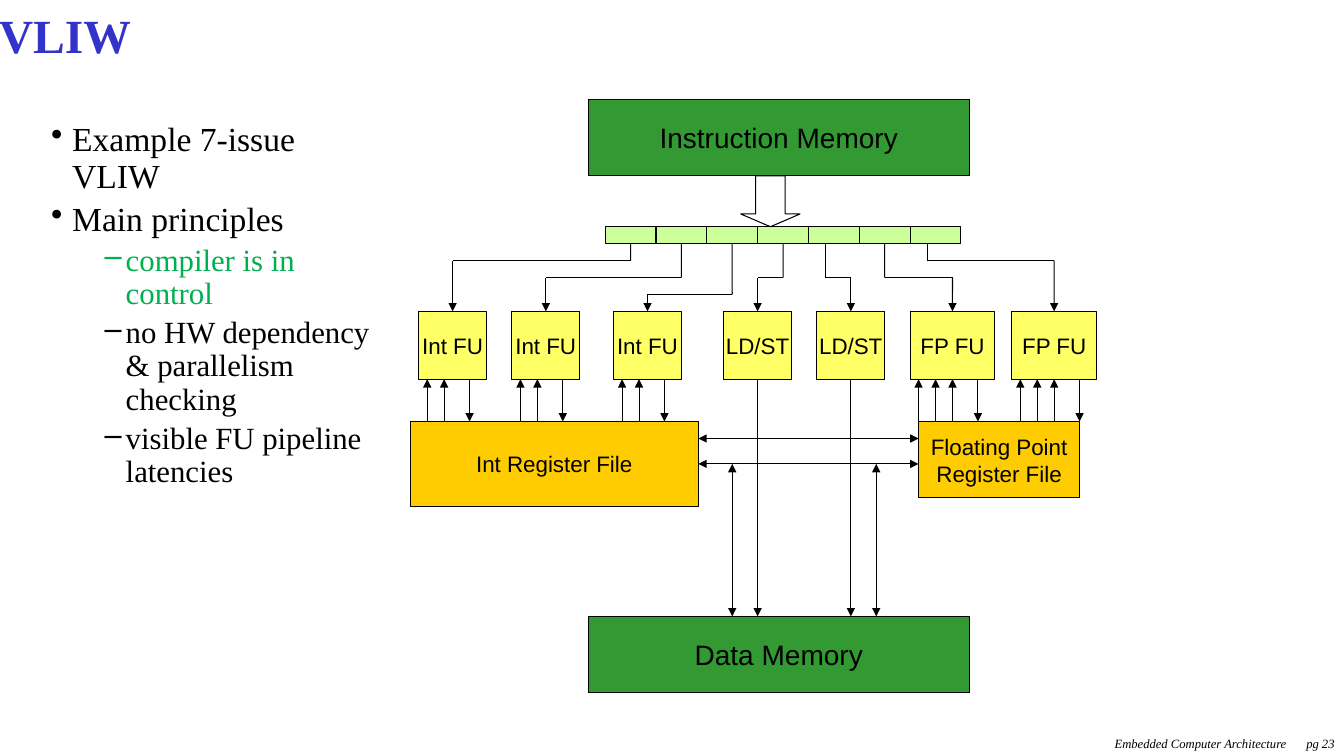
from dataclasses import dataclass

from lxml.etree import SubElement
from pptx import Presentation
from pptx.dml.color import RGBColor
from pptx.enum.shapes import MSO_CONNECTOR, MSO_SHAPE
from pptx.enum.text import MSO_ANCHOR, PP_ALIGN
from pptx.oxml.ns import qn
from pptx.util import Cm, Pt

TOP, BOTTOM, RIGHT = 0, 2, 3


@dataclass(frozen=True)
class Theme:
    serif: str = "Times New Roman"
    sans: str = "Arial"
    black: RGBColor = RGBColor(0x00, 0x00, 0x00)
    title: RGBColor = RGBColor(0x33, 0x33, 0xCC)
    highlight: RGBColor = RGBColor(0x00, 0xB0, 0x50)
    memory: RGBColor = RGBColor(0x33, 0x99, 0x33)
    register: RGBColor = RGBColor(0xFF, 0xCC, 0x00)
    unit: RGBColor = RGBColor(0xFF, 0xFF, 0x66)
    slot: RGBColor = RGBColor(0xCC, 0xFF, 0x99)
    title_size: int = 34
    body_sizes: tuple = (24, 22)
    memory_size: int = 20
    label_size: int = 16
    footer_size: int = 9
    line_width: float = 0.75


class DiagramSlide:
    """Draws on one slide; the diagram is placed by grid columns and rows."""

    left, top = 10.34, 2.51
    step = 12.81 / 60

    def __init__(self, slide, theme):
        self.shapes = slide.shapes
        self.theme = theme

    def point(self, column, row):
        return Cm(self.left + column * self.step), Cm(self.top + row * self.step)

    def style_font(self, paragraph, name, size, color):
        font = paragraph.font
        font.name, font.size, font.color.rgb = name, Pt(size), color
        return font

    def text_box(self, left, top, width, height):
        frame = self.shapes.add_textbox(Cm(left), Cm(top), Cm(width), Cm(height)).text_frame
        frame.word_wrap = True
        frame.margin_right = 0
        return frame

    def title(self, text):
        frame = self.text_box(-0.28, 0, 31.65, 2.03)
        frame.vertical_anchor = MSO_ANCHOR.MIDDLE
        paragraph = frame.paragraphs[0]
        paragraph.text = text
        paragraph.line_spacing = 0.8
        font = self.style_font(paragraph, self.theme.serif, self.theme.title_size, self.theme.title)
        font.bold = True

    def bullets(self, items):
        """Each item is (level, text, color)."""
        frame = self.text_box(1.04, 2.97, 8.64, 15)
        for index, (level, text, color) in enumerate(items):
            paragraph = frame.add_paragraph() if index else frame.paragraphs[0]
            size = self.theme.body_sizes[level]
            paragraph.text = text
            paragraph.level = level
            paragraph.line_spacing = 0.9
            paragraph.space_before = Pt(size * 0.2)
            properties = paragraph._p.get_or_add_pPr()
            properties.set("marL", str(Cm((0.53, 1.88)[level])))
            properties.set("indent", str(Cm(-0.53)))
            SubElement(properties, qn("a:buChar")).set("char", "•–"[level])
            self.style_font(paragraph, self.theme.serif, size, color)

    def footer(self, text, tab):
        paragraph = self.text_box(27.84, 18.42, 6.02, 0.64).paragraphs[0]
        paragraph.text = text
        tabs = SubElement(paragraph._p.get_or_add_pPr(), qn("a:tabLst"))
        SubElement(tabs, qn("a:tab"), pos=str(Cm(tab)), algn="l")
        font = self.style_font(paragraph, self.theme.serif, self.theme.footer_size, self.theme.black)
        font.italic = True

    def block(self, column, row, columns, rows, fill=None, text="", size=None, kind=MSO_SHAPE.RECTANGLE):
        width, height = Cm(columns * self.step), Cm(rows * self.step)
        shape = self.shapes.add_shape(kind, *self.point(column, row), width, height)
        shape.shadow.inherit = False
        if fill is None:
            shape.fill.background()
        else:
            shape.fill.solid()
            shape.fill.fore_color.rgb = fill
        shape.line.color.rgb = self.theme.black
        shape.line.width = Pt(self.theme.line_width)
        if text:
            frame = shape.text_frame
            frame.word_wrap = False
            frame.vertical_anchor = MSO_ANCHOR.MIDDLE
            frame.text = text
            for paragraph in frame.paragraphs:
                paragraph.alignment = PP_ALIGN.CENTER
                self.style_font(paragraph, self.theme.sans, size or self.theme.label_size, self.theme.black)
        return shape

    def line(self, start, end, heads=(), begin=None, finish=None):
        """Heads lists "headEnd" and/or "tailEnd"; begin and finish are (shape, side)."""
        connector = self.shapes.add_connector(
            MSO_CONNECTOR.STRAIGHT, *self.point(*start), *self.point(*end))
        connector.line.color.rgb = self.theme.black
        connector.line.width = Pt(self.theme.line_width)
        for head in heads:
            SubElement(connector.line._get_or_add_ln(), qn(f"a:{head}")).set("type", "triangle")
        SubElement(connector._element.spPr, qn("a:effectLst"))
        if begin:
            connector.begin_connect(*begin)
        if finish:
            connector.end_connect(*finish)


def draw_datapath(canvas):
    theme = canvas.theme
    forward, both = ("tailEnd",), ("headEnd", "tailEnd")
    unit_top, unit_bottom, register_top, memory_top = 25, 33, 38, 61
    slot_left, slot_top, slot_width, slot_bottom = 23, 15, 6, 17

    canvas.block(21, 0, 45, 9, theme.memory, "Instruction Memory", theme.memory_size)
    canvas.block(21, memory_top, 45, 9, theme.memory, "Data Memory", theme.memory_size)
    integer_file = canvas.block(0, register_top, 34, 10, theme.register, "Int Register File")
    canvas.block(60, register_top, 19, 9, theme.register, "Floating Point\nRegister File")

    # unit kind: (width, read ports, write port)
    kinds = {"Int FU": (8, (1, 3), 6), "LD/ST": (8, (), None), "FP FU": (10, (1, 3, 5), 8)}
    # unit name, left column, column where its route leaves the slot, row where the route turns
    units = [
        ("Int FU", 1, 26, 19), ("Int FU", 12, 32, 21), ("Int FU", 24, 38, 23),
        ("LD/ST", 37, 44, 21), ("LD/ST", 48, 49, 21),
        ("FP FU", 59, 56, 21), ("FP FU", 71, 61, 19),
    ]
    for index, (name, left, source, turn) in enumerate(units):
        width, reads, write = kinds[name]
        center = left + width // 2
        slot_column = slot_left + index * slot_width
        slot = canvas.block(slot_column, slot_top, slot_width, slot_bottom - slot_top, theme.slot)
        unit = canvas.block(left, unit_top, width, unit_bottom - unit_top, theme.unit, name)

        centered = source == slot_column + slot_width // 2
        canvas.line((source, slot_bottom), (source, turn), begin=(slot, BOTTOM) if centered else None)
        canvas.line((source, turn), (center, turn))
        canvas.line((center, turn), (center, unit_top), forward, finish=(unit, TOP))

        for port in reads:
            canvas.line((left + port, register_top), (left + port, unit_bottom), forward)
        if write:
            canvas.line((left + write, unit_bottom), (left + write, register_top), forward)
        else:
            canvas.line((center, unit_bottom), (center, memory_top), forward, begin=(unit, BOTTOM))

    canvas.block(39, 9, 7, 6, kind=MSO_SHAPE.DOWN_ARROW).adjustments[1] = 0.25
    canvas.line((34, 40), (60, 40), both)
    canvas.line((34, 43), (60, 43), both, begin=(integer_file, RIGHT))
    for column in (38, 55):
        canvas.line((column, 43), (column, memory_top), both)


def main():
    presentation = Presentation()
    presentation.slide_width, presentation.slide_height = Cm(33.87), Cm(19.05)
    theme = Theme()
    canvas = DiagramSlide(presentation.slides.add_slide(presentation.slide_layouts[6]), theme)
    canvas.footer("Embedded Computer Architecture\tpg 23", tab=4.83)
    canvas.title("VLIW")
    canvas.bullets([
        (0, "Example 7-issue VLIW", theme.black),
        (0, "Main principles", theme.black),
        (1, "compiler is in control", theme.highlight),
        (1, "no HW dependency & parallelism checking", theme.black),
        (1, "visible FU pipeline\vlatencies", theme.black),
    ])
    draw_datapath(canvas)
    presentation.save("out.pptx")


if __name__ == "__main__":
    main()
